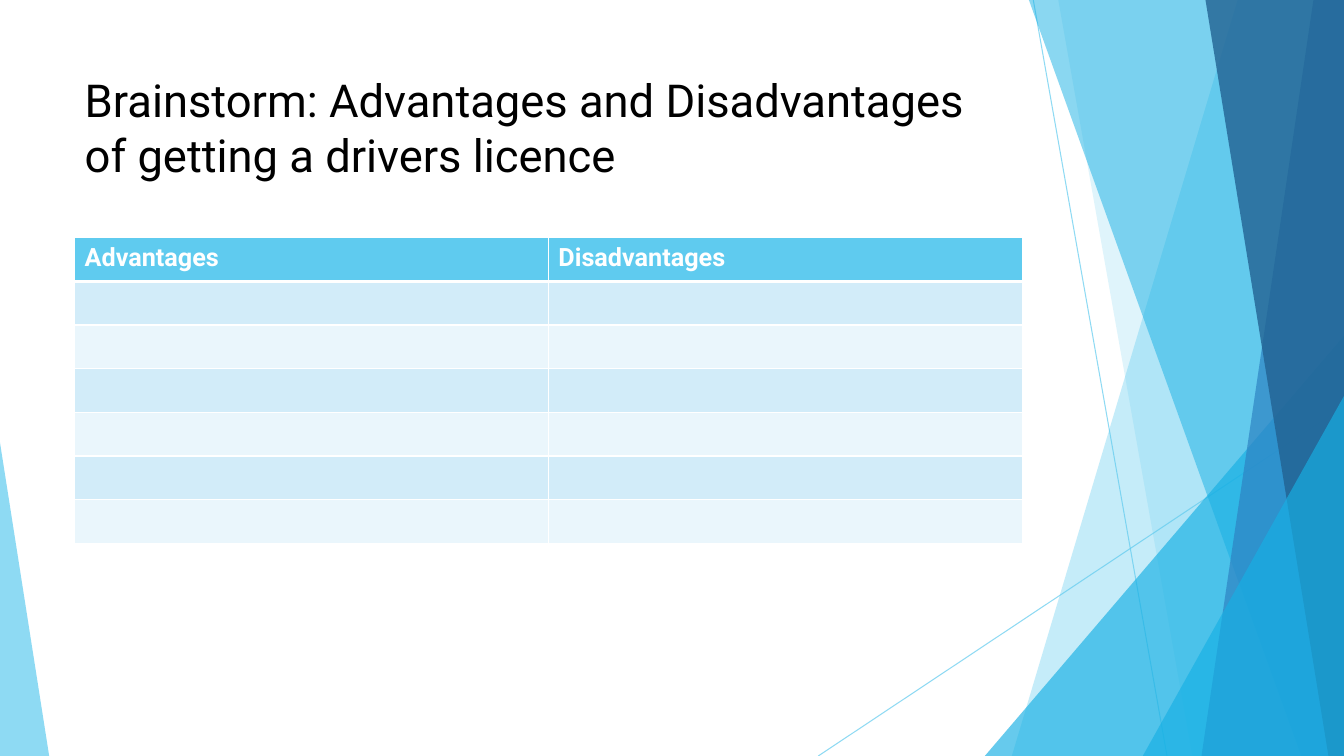
import lxml.etree
import pptx
import pptx.dml.color
import pptx.enum.shapes
import pptx.enum.text
import pptx.oxml
import pptx.oxml.ns
import pptx.util
from pptx.util import Cm

TITLE = "Brainstorm: Advantages and Disadvantages of getting a drivers licence"
HEADINGS = ["Advantages", "Disadvantages"]
EMPTY_ROWS = 6
FONT = "Roboto"
HEADER_FILL = "5FCBEF"
BAND_FILLS = ["D2ECF9", "EAF6FC"]

WIDTH, HEIGHT = 33.87, 19.05
LEFT, CONTENT_WIDTH = 1.88, 23.88
TITLE_TOP, TITLE_HEIGHT = 1.7, 3.66
TABLE_TOP, ROW_HEIGHT = 5.99, 1.1

# Lengths in cm, opacity in percent, listed from back to front
THIN_LINES = [(26.04, 0, 29.41, HEIGHT), (WIDTH, 10.24, 20.62, HEIGHT)]
DECORATION = [
    ("band", (31.19, 25.5), "5FCBEF", 36),
    ("band", (26.67, 30.05), "5FCBEF", 20),
    ("triangle", (24.82, WIDTH, 8.46, 1), "17B0E4", 66),
    ("band", (25.93, 32.79), "17B0E4", 50),
    ("band", (33.1, 30.28), "2E83C3", 70),
    ("band", (30.38, 33.48), "226292", 80),
    ("triangle", (28.8, WIDTH, 9.98, 1), "17B0E4", 66),
    ("triangle", (0, 1.24, 11.15, 0), "5FCBEF", 70),
]


def rgb(color):
    return pptx.dml.color.RGBColor.from_string(color)


def set_opacity(shape, percent):
    for color in shape.element.spPr.iter(pptx.oxml.ns.qn("a:srgbClr")):
        alpha = lxml.etree.SubElement(color, pptx.oxml.ns.qn("a:alpha"))
        alpha.set("val", str(percent * 1000))


def format_font(font, **values):
    font.color.rgb = rgb(values.pop("color"))
    for name, value in values.items():
        setattr(font, name, value)


def add_thin_line(slide, ends):
    line = slide.shapes.add_connector(
        pptx.enum.shapes.MSO_CONNECTOR.STRAIGHT, *map(Cm, ends))
    line.line.color.rgb = rgb("5FCBEF")
    line.line.width = pptx.util.Pt(0.75)
    set_opacity(line, 70)
    lxml.etree.SubElement(line.element.spPr, pptx.oxml.ns.qn("a:effectLst"))


def add_band(slide, top_x, bottom_x):
    """Add a full-height shape from a slanted edge to the slide's right side."""
    builder = slide.shapes.build_freeform(Cm(top_x), 0, scale=1.0)
    corners = [(WIDTH, 0), (WIDTH, HEIGHT), (bottom_x, HEIGHT)]
    builder.add_line_segments([(Cm(x), Cm(y)) for x, y in corners])
    return builder.convert_to_shape()


def add_triangle(slide, left, right, top, apex):
    """Add a triangle standing on the slide's bottom edge."""
    triangle = slide.shapes.add_shape(
        pptx.enum.shapes.MSO_SHAPE.ISOSCELES_TRIANGLE,
        Cm(left), Cm(top), Cm(right - left), Cm(HEIGHT - top))
    triangle.adjustments[0] = apex
    return triangle


def add_decoration(slide):
    for ends in THIN_LINES:
        add_thin_line(slide, ends)
    builders = {"band": add_band, "triangle": add_triangle}
    for kind, geometry, color, opacity in DECORATION:
        shape = builders[kind](slide, *geometry)
        shape.shadow.inherit = False
        shape.fill.solid()
        shape.fill.fore_color.rgb = rgb(color)
        shape.line.fill.background()
        set_opacity(shape, opacity)


def add_title(slide):
    title = slide.shapes.title
    title.left, title.top = Cm(LEFT), Cm(TITLE_TOP)
    title.width, title.height = Cm(CONTENT_WIDTH), Cm(TITLE_HEIGHT)
    frame = title.text_frame
    frame.text = TITLE
    frame.word_wrap = True
    frame.auto_size = pptx.enum.text.MSO_AUTO_SIZE.NONE
    frame.vertical_anchor = pptx.enum.text.MSO_ANCHOR.TOP
    paragraph = frame.paragraphs[0]
    paragraph.alignment = pptx.enum.text.PP_ALIGN.LEFT
    paragraph.line_spacing = 1.0
    format_font(paragraph.runs[0].font, name=FONT, size=pptx.util.Pt(32.4),
                color="000000")


def set_borders(cell, widths):
    """Give the cell white borders, widths in points by side."""
    properties = cell._tc.get_or_add_tcPr()
    namespace = pptx.oxml.ns.nsdecls("a")
    for side, width in widths.items():
        properties.append(pptx.oxml.parse_xml(
            f'<a:ln{side} {namespace} w="{pptx.util.Pt(width)}"><a:solidFill>'
            f'<a:srgbClr val="FFFFFF"/></a:solidFill></a:ln{side}>'))


def add_table(slide):
    row_count = EMPTY_ROWS + 1
    table = slide.shapes.add_table(
        row_count, len(HEADINGS), Cm(LEFT), Cm(TABLE_TOP),
        Cm(CONTENT_WIDTH), Cm(ROW_HEIGHT * row_count)).table
    for row_index, row in enumerate(table.rows):
        fill = BAND_FILLS[(row_index - 1) % 2] if row_index else HEADER_FILL
        widths = {"L": 1, "R": 1, "T": 3 if row_index == 1 else 1,
                  "B": 3 if row_index == 0 else 1}
        for cell in row.cells:
            set_borders(cell, widths)
            cell.fill.solid()
            cell.fill.fore_color.rgb = rgb(fill)
    for cell, heading in zip(table.rows[0].cells, HEADINGS):
        cell.text = heading
        format_font(cell.text_frame.paragraphs[0].runs[0].font, name=FONT,
                    size=pptx.util.Pt(18), bold=True, color="FFFFFF")


def main():
    presentation = pptx.Presentation()
    presentation.slide_width = Cm(WIDTH)
    presentation.slide_height = Cm(HEIGHT)
    slide = presentation.slides.add_slide(presentation.slide_layouts[5])
    add_decoration(slide)
    add_title(slide)
    add_table(slide)
    presentation.save("out.pptx")


if __name__ == "__main__":
    main()
